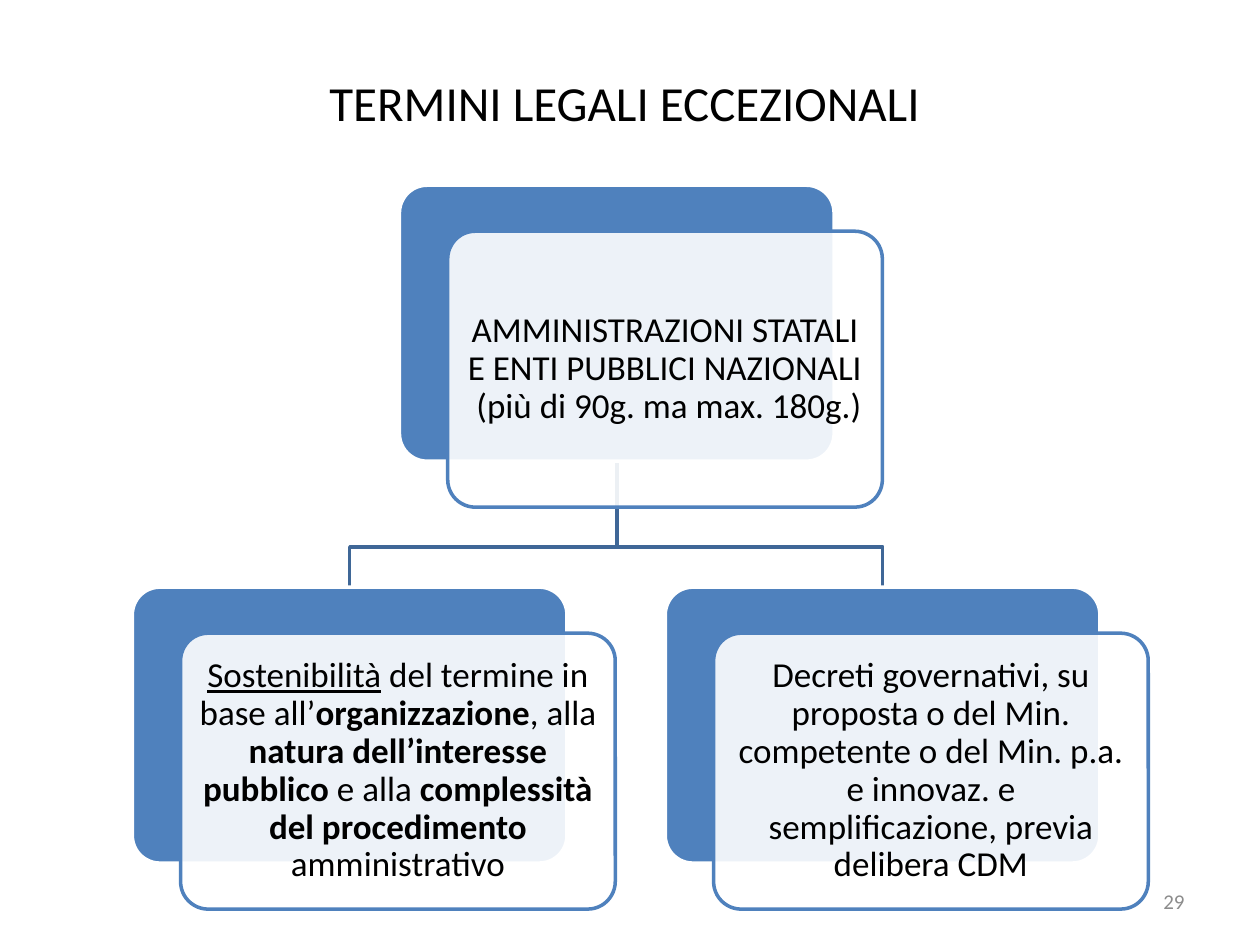
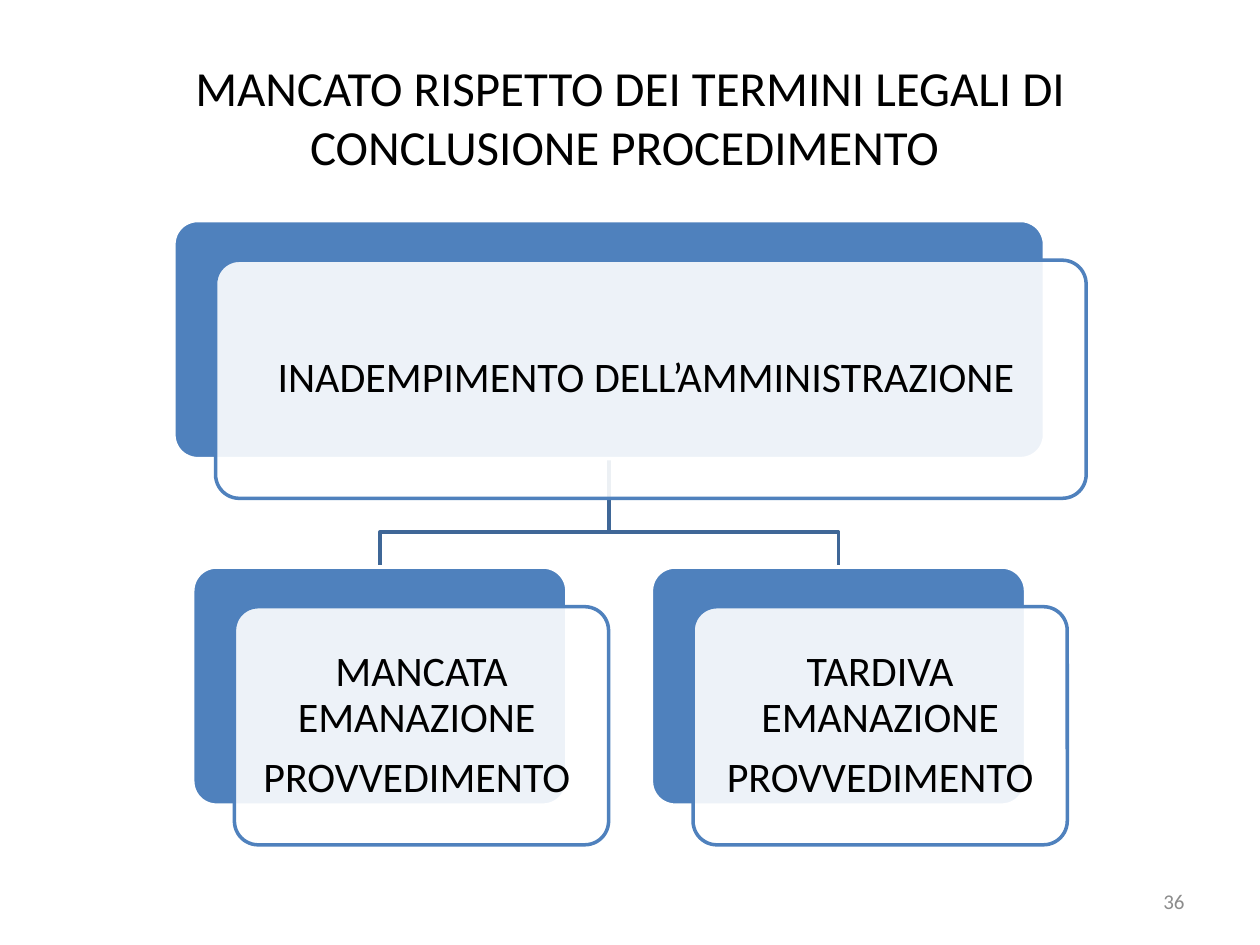
from lxml.etree import SubElement
from pptx import Presentation
from pptx.dml.color import RGBColor
from pptx.enum.shapes import MSO_SHAPE
from pptx.enum.text import MSO_ANCHOR, PP_ALIGN
from pptx.oxml.ns import qn
from pptx.util import Inches, Pt

FONT = "Calibri"
BLACK, WHITE, GRAY = "000000", "FFFFFF", "8C8C8C"
BLUE, DARK_BLUE = "4F81BD", "3F6797"
LINE_WIDTH = Pt(2)
BOLD, UNDERLINE = {"bold": True}, {"underline": True}


def color(hex_text):
    return RGBColor.from_string(hex_text)


def outline(shape, line_color):
    shape.shadow.inherit = False
    shape.line.color.rgb = color(line_color)
    shape.line.width = LINE_WIDTH


def write(shape, paragraphs, size, text_color=BLACK, align=PP_ALIGN.CENTER,
          inset=None, **spacing):
    """Fill a shape with paragraphs, each a list of (text, format) spans."""
    frame = shape.text_frame
    frame.word_wrap = True
    frame.vertical_anchor = MSO_ANCHOR.MIDDLE
    if inset is not None:
        for side in ("left", "top", "right", "bottom"):
            setattr(frame, f"margin_{side}", Inches(inset))
    for index, spans in enumerate(paragraphs):
        para = frame.add_paragraph() if index else frame.paragraphs[0]
        for name, value in {"alignment": align, **spacing}.items():
            setattr(para, name, value)
        for text, extra in spans:
            span = para.add_run()
            span.text = text
            span.font.color.rgb = color(text_color)
            for name, value in {"name": FONT, "size": Pt(size), **extra}.items():
                setattr(span.font, name, value)


def add_text(page, text, left, top, width, height, size, **options):
    box = page.shapes.add_textbox(*map(Inches, (left, top, width, height)))
    write(box, [[(text, {})]], size, **options)


def add_page(deck, title, title_height, number):
    page = deck.slides.add_slide(deck.slide_layouts[6])
    add_text(page, title, 0.5, 0.3, 9, title_height, 28)
    add_text(page, number, 7.17, 6.95, 2.33, 0.4, 12,
             text_color=GRAY, align=PP_ALIGN.RIGHT)
    return page


def add_panel(page, left, top, width, height, fill, line, opacity=None):
    panel = page.shapes.add_shape(MSO_SHAPE.ROUNDED_RECTANGLE,
                                  *map(Inches, (left, top, width, height)))
    panel.adjustments[0] = 0.1
    panel.fill.solid()
    panel.fill.fore_color.rgb = color(fill)
    outline(panel, line)
    if opacity is not None:
        fill_color = panel._element.spPr.find(qn("a:solidFill"))[0]
        SubElement(fill_color, qn("a:alpha"), val=str(opacity * 1000))
    return panel


def add_card(page, left, top, width, height, paragraphs, size):
    """Draw a blue panel with a translucent text panel shifted in front."""
    add_panel(page, left, top, width, height, BLUE, WHITE)
    front = add_panel(page, left + 0.175 * height, top + height / 6,
                      width, height, WHITE, BLUE, opacity=90)
    write(front, paragraphs, size, inset=size / 250,
          line_spacing=0.9, space_after=Pt(0.35 * size))


def add_branch(page, start, end, bend):
    (start_x, start_y), (end_x, end_y) = start, end
    builder = page.shapes.build_freeform(Inches(start_x), Inches(start_y))
    corners = [(start_x, bend), (end_x, bend), (end_x, end_y)]
    builder.add_line_segments([(Inches(x), Inches(y)) for x, y in corners],
                              close=False)
    branch = builder.convert_to_shape()
    branch.fill.background()
    outline(branch, DARK_BLUE)


def add_tree(page, root, children, height, size):
    """Join a root card to its children; cards are (left, top, width, text)."""
    left, top, width, _ = root
    start = (left + width / 2, top + height)
    for child_left, child_top, child_width, _ in reversed(children):
        end = (child_left + child_width / 2, child_top)
        add_branch(page, start, end, child_top - 0.146 * height)
    for card_left, card_top, card_width, paragraphs in [root, *children]:
        add_card(page, card_left, card_top, card_width, height, paragraphs, size)


def main():
    deck = Presentation()
    deck.slide_width, deck.slide_height = Inches(10), Inches(7.5)

    page = add_page(deck, "TERMINI LEGALI ECCEZIONALI ", 1.01, "29")
    administrations = [[("AMMINISTRAZIONI STATALI E ENTI PUBBLICI NAZIONALI  "
                         "(più di 90g. ma max. 180g.)", {})]]
    sustainability = [[
        ("Sostenibilità", UNDERLINE),
        (" del termine in base all’", {}),
        ("organizzazione", BOLD),
        (", alla ", {}),
        ("natura dell’interesse pubblico", BOLD),
        (" e alla ", {}),
        ("complessità del procedimento ", BOLD),
        ("amministrativo", {}),
    ]]
    decrees = [[("Decreti governativi, su proposta o del Min. competente o del "
                 "Min. p.a. e innovaz. e semplificazione, previa delibera CDM", {})]]
    add_tree(page, (3.17, 1.47, 3.45, administrations),
             [(1.05, 4.66, 3.45, sustainability), (5.28, 4.66, 3.45, decrees)],
             height=2.19, size=20)

    page = add_page(deck, "MANCATO RISPETTO DEI TERMINI LEGALI DI "
                    "CONCLUSIONE PROCEDIMENTO ", 1.25, "36")
    default = [[("INADEMPIMENTO DELL’AMMINISTRAZIONE ", {})]]
    missing = [[("MANCATA EMANAZIONE ", {})], [("PROVVEDIMENTO ", {})]]
    late = [[("TARDIVA EMANAZIONE", {})], [("PROVVEDIMENTO", {})]]
    add_tree(page, (1.38, 1.75, 6.91, default),
             [(1.53, 4.5, 2.97, missing), (5.17, 4.5, 2.97, late)],
             height=1.89, size=24)

    deck.save("out.pptx")


if __name__ == "__main__":
    main()
